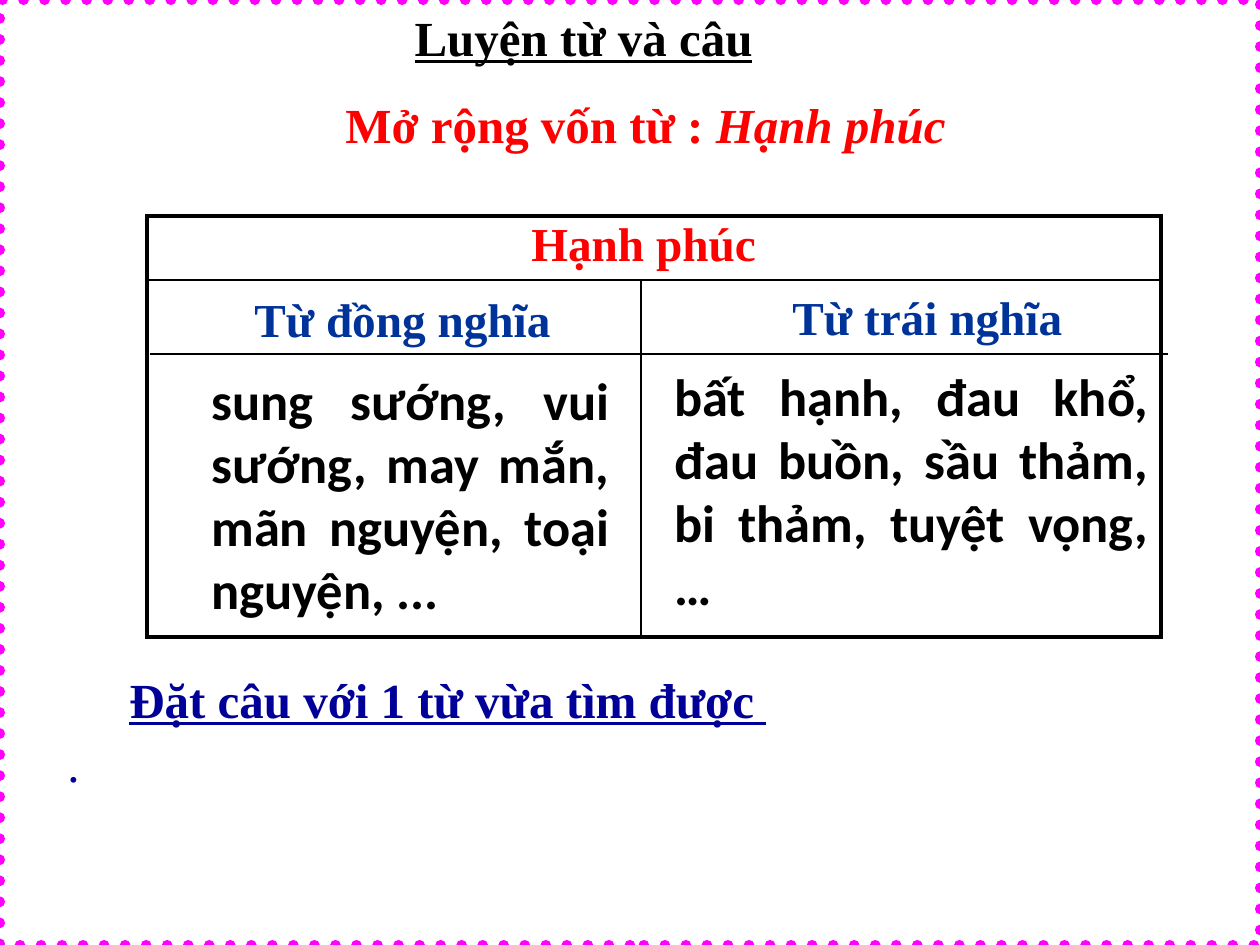
from lxml.etree import SubElement
from pptx import Presentation
from pptx.dml.color import RGBColor
from pptx.enum.dml import MSO_LINE
from pptx.enum.shapes import MSO_CONNECTOR, MSO_SHAPE
from pptx.enum.text import MSO_ANCHOR, MSO_AUTO_SIZE, PP_ALIGN
from pptx.oxml.ns import qn
from pptx.util import Pt

WIDTH, HEIGHT = 1260, 945
SERIF, SANS = "Times New Roman", "Calibri"
BLACK, RED, BLUE, NAVY, MAGENTA = "000000", "FF0000", "003399", "000099", "FF00FF"

TITLE = ("Luyện từ và câu", (402, 1, 420, 70))
LESSON = ([[("Mở rộng vốn từ : ", {}), ("Hạnh phúc", {"italic": True})]], (333, 88, 719, 72))
TASK = ([[("Đặt câu với 1 từ vừa tìm được ", {"underline": True})],
         [(".", {"bold": False})]], (55, 657, 1208, 139))
TASK_INDENT = 62
HEADINGS = [
    ("Hạnh phúc", RED, (519, 208, 289, 72)),
    ("Từ đồng nghĩa", BLUE, (242, 284, 373, 71)),
    ("Từ trái nghĩa", BLUE, (780, 282, 386, 71)),
]
WORD_LISTS = [
    ("sung sướng, vui sướng, may mắn, mãn nguyện, toại nguyện, ...", (199, 362, 423, 267)),
    ("bất hạnh, đau khổ, đau buồn, sầu thảm, bi thảm, tuyệt vọng, …", (662, 358, 499, 267)),
]
TABLE_LEFT, TABLE_TOP = 147, 216
COLUMNS, ROWS = (494, 520), (64, 357)
THICK, THIN = 2.25, 1
DIVIDER = (150, 354, 1168, 354)


def px(*lengths):
    return [round(length * 914400 / 126) for length in lengths]


def color(value):
    return RGBColor.from_string(value)


def write(shape, paragraphs, size=28, font=SERIF, fill=BLACK, align=PP_ALIGN.LEFT, **style):
    frame = shape.text_frame
    frame.word_wrap = True
    frame.auto_size = MSO_AUTO_SIZE.NONE
    frame.vertical_anchor = MSO_ANCHOR.TOP
    if isinstance(paragraphs, str):
        paragraphs = [[(paragraphs, {})]]
    for number, runs in enumerate(paragraphs):
        paragraph = frame.add_paragraph() if number else frame.paragraphs[0]
        paragraph.alignment = align
        paragraph.line_spacing = style.get("spacing", 1.0)
        for text, changes in runs:
            run = paragraph.add_run()
            run.text = text
            look = {"bold": True, **style, **changes}
            run.font.name, run.font.size = font, Pt(size)
            run.font.color.rgb = color(fill)
            run.font.bold = look["bold"]
            run.font.italic = look.get("italic")
            run.font.underline = look.get("underline")
    return frame


def add_text(slide, paragraphs, box, **style):
    return write(slide.shapes.add_textbox(*px(*box)), paragraphs, **style)


def border(cell, widths):
    properties = cell._tc.get_or_add_tcPr()
    for number, (side, width) in enumerate(zip(("lnL", "lnR", "lnT", "lnB"), widths)):
        line = properties.makeelement(qn(f"a:{side}"), {"w": str(Pt(width))})
        SubElement(SubElement(line, qn("a:solidFill")), qn("a:srgbClr"), val=BLACK)
        properties.insert(number, line)


def add_grid(slide):
    table = slide.shapes.add_table(
        len(ROWS), len(COLUMNS), *px(TABLE_LEFT, TABLE_TOP, sum(COLUMNS), sum(ROWS))).table
    table.first_row = table.horz_banding = False
    for column, width in zip(table.columns, px(*COLUMNS)):
        column.width = width
    for row, height in zip(table.rows, px(*ROWS)):
        row.height = height
    table.cell(0, 0).merge(table.cell(0, 1))
    for r in range(len(ROWS)):
        for c in range(len(COLUMNS)):
            cell = table.cell(r, c)
            cell.fill.background()
            left = THICK if c == 0 else THIN
            right = THICK if r == 0 or c == 1 else THIN
            border(cell, (left, right, THIN if r else THICK, THICK if r else THIN))


def add_divider(slide):
    divider = slide.shapes.add_connector(MSO_CONNECTOR.STRAIGHT, *px(*DIVIDER))
    divider.line.color.rgb = color(BLACK)
    divider.line.width = Pt(THIN)
    SubElement(divider._element.spPr, qn("a:effectLst"))


def add_page_border(slide):
    page = slide.shapes.add_shape(MSO_SHAPE.RECTANGLE, *px(0, 0, WIDTH, HEIGHT))
    page.shadow.inherit = False
    page.fill.background()
    page.line.color.rgb = color(MAGENTA)
    page.line.width = Pt(6)
    page.line.dash_style = MSO_LINE.ROUND_DOT
    page.line._get_or_add_ln().set("cap", "rnd")


def main():
    deck = Presentation()
    deck.slide_width, deck.slide_height = px(WIDTH, HEIGHT)
    slide = deck.slides.add_slide(deck.slide_layouts[5])
    title = slide.shapes.title
    heading, box = TITLE
    title.left, title.top, title.width, title.height = px(*box)
    write(title, heading, underline=True)
    add_grid(slide)
    for text, fill, box in HEADINGS:
        add_text(slide, text, box, size=27, fill=fill)
    for text, box in WORD_LISTS:
        add_text(slide, text, box, size=30, font=SANS, align=PP_ALIGN.JUSTIFY)
    add_divider(slide)
    add_text(slide, *LESSON, fill=RED)
    task = add_text(slide, *TASK, fill=NAVY, align=PP_ALIGN.JUSTIFY, spacing=1.1)
    task.paragraphs[0]._p.get_or_add_pPr().set("indent", str(px(TASK_INDENT)[0]))
    add_page_border(slide)
    deck.save("out.pptx")


if __name__ == "__main__":
    main()
